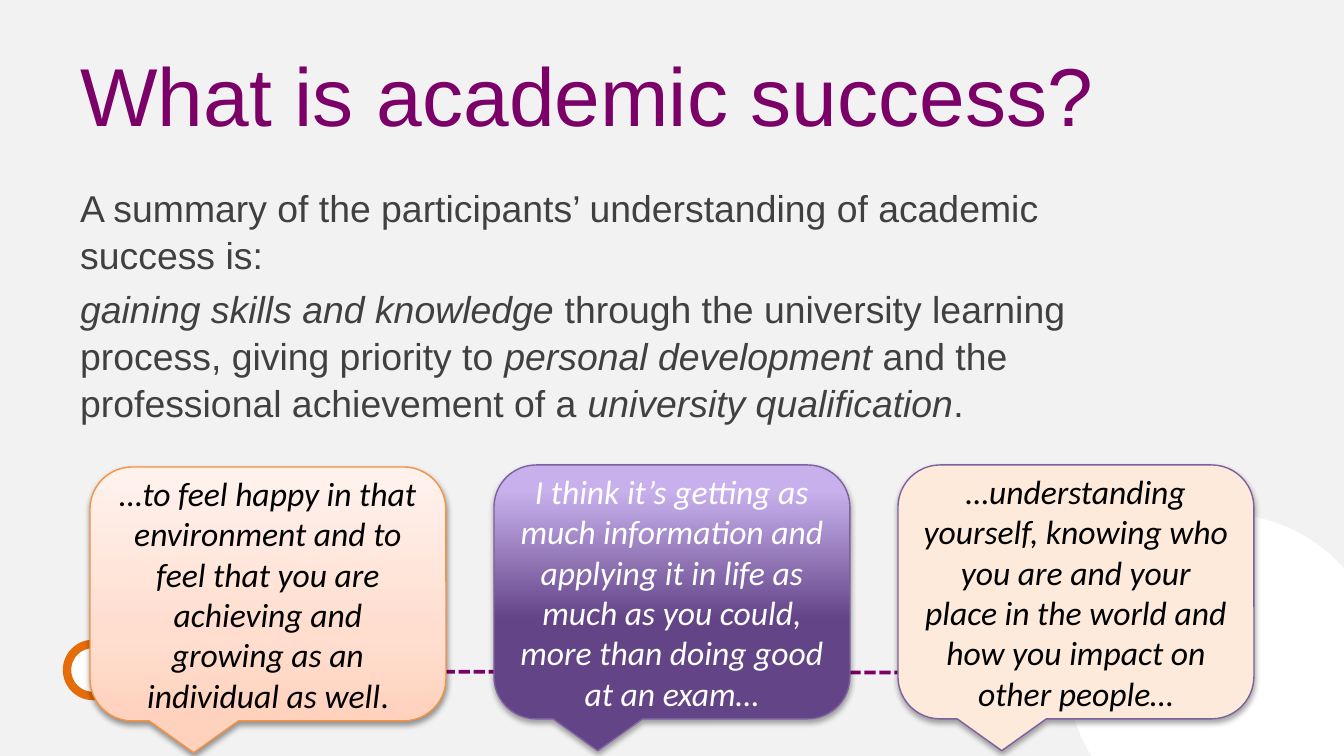
from dataclasses import dataclass

from lxml.etree import SubElement
from pptx import Presentation
from pptx.dml.color import RGBColor
from pptx.enum.dml import MSO_LINE
from pptx.enum.shapes import MSO_CONNECTOR, MSO_SHAPE
from pptx.enum.text import MSO_ANCHOR, MSO_AUTO_SIZE, PP_ALIGN
from pptx.oxml import parse_xml
from pptx.oxml.ns import nsdecls, qn
from pptx.util import Pt

PX = 914400 / 134.4


@dataclass(frozen=True)
class Theme:
    page: str = "F2F2F2"
    white: str = "FFFFFF"
    black: str = "000000"
    plum: str = "7B0068"
    ring: str = "E46C0A"
    body: str = "404040"
    orange_edge: str = "F69240"
    purple_edge: str = "7D60A0"
    peach: str = "FDEADA"
    # Gradient stops run from the bottom edge upwards
    orange_fade: tuple = ((0, "FFD2BD"), (35, "FFDED0"), (100, "FFF2ED"))
    purple_fade: tuple = ((39, "634587"), (90, "C8B0ED"))
    sans: str = "Arial"
    quote_font: str = "Calibri"
    title_size: int = 44
    body_size: int = 20
    quote_size: int = 18


THEME = Theme()

# Each paragraph is a list of (text, italic) spans
SUMMARY = [
    [("A summary of the participants’ understanding of academic success is:", False)],
    [("gaining skills and knowledge", True),
     (" through the university learning process, giving priority to ", False),
     ("personal development", True),
     (" and the professional achievement of a ", False),
     ("university qualification", True),
     (".", False)],
]

# Top, fill, edge, text colour, shadow opacity in percent, spans
QUOTES = [
    (467, THEME.orange_fade, THEME.orange_edge, THEME.black, 38,
     [("…to feel happy in that environment and to feel that you are "
       "achieving and growing as an individual as well", True), (".", False)]),
    (465, THEME.purple_fade, THEME.purple_edge, THEME.white, 35,
     [("I think it’s getting as much information and applying it in life "
       "as much as you could, more than doing good at an exam…", True)]),
    (465, THEME.peach, THEME.purple_edge, THEME.black, 35,
     [("…understanding yourself, knowing who you are and your place in the "
       "world and how you impact on other people…", True)]),
]


def px(*lengths):
    return [round(length * PX) for length in lengths]


def set_all(target, values):
    for name, value in values.items():
        setattr(target, name, value)


def write(frame, paragraphs, font, size, color, frame_format, para_format, gap=0):
    set_all(frame, {"word_wrap": True, "auto_size": MSO_AUTO_SIZE.NONE, **frame_format})
    for index, spans in enumerate(paragraphs):
        para = frame.add_paragraph() if index else frame.paragraphs[0]
        set_all(para, {"space_before": Pt(gap if index else 0), **para_format})
        for text, italic in spans:
            span = para.add_run()
            span.text = text
            set_all(span.font, {"name": font, "size": Pt(size), "italic": italic})
            span.font.color.rgb = RGBColor.from_string(color)


def fade(shape, stops):
    marks = "".join(
        f'<a:gs pos="{position * 1000}"><a:srgbClr val="{color}"/></a:gs>'
        for position, color in stops)
    shape.element.spPr.find(qn("a:prstGeom")).addnext(parse_xml(
        f'<a:gradFill {nsdecls("a")} rotWithShape="1"><a:gsLst>{marks}</a:gsLst>'
        '<a:lin ang="16200000" scaled="0"/></a:gradFill>'))


def add_shape(page, kind, place, fill, edge, edge_width=0.75):
    shape = page.shapes.add_shape(kind, *px(*place))
    shape.shadow.inherit = False
    if isinstance(fill, tuple):
        fade(shape, fill)
    else:
        shape.fill.solid()
        shape.fill.fore_color.rgb = RGBColor.from_string(fill)
    shape.line.color.rgb = RGBColor.from_string(edge)
    shape.line.width = Pt(edge_width)
    return shape


def add_dashes(page, ends):
    line = page.shapes.add_connector(MSO_CONNECTOR.STRAIGHT, *px(*ends))
    line.line.color.rgb = RGBColor.from_string(THEME.plum)
    set_all(line.line, {"width": Pt(2), "dash_style": MSO_LINE.SQUARE_DOT})
    SubElement(line.element.spPr, qn("a:effectLst"))


def drop_shadow(shape, opacity):
    effects = shape.element.spPr.find(qn("a:effectLst"))
    effects.append(parse_xml(
        f'<a:outerShdw {nsdecls("a")} blurRad="{Pt(3.1)}" dist="{Pt(1.7)}" '
        'dir="5400000" rotWithShape="0"><a:srgbClr val="000000">'
        f'<a:alpha val="{opacity * 1000}"/></a:srgbClr></a:outerShdw>'))


def add_quote(page, left, quote):
    top, fill, edge, color, opacity, spans = quote
    callout = add_shape(page, MSO_SHAPE.ROUNDED_RECTANGULAR_CALLOUT,
                        (left, top, 356, 254), fill, edge)
    drop_shadow(callout, opacity)
    write(callout.text_frame, [spans], THEME.quote_font, THEME.quote_size, color,
          {"vertical_anchor": MSO_ANCHOR.MIDDLE}, {"alignment": PP_ALIGN.CENTER})


def add_backdrop(page):
    add_shape(page, MSO_SHAPE.RECTANGLE, (0, 0, 1344, 756), THEME.page, THEME.page)
    add_dashes(page, (128, 671, 1074, 673))
    add_shape(page, MSO_SHAPE.OVAL, (1068, 515, 314, 314), THEME.white, THEME.white)
    add_shape(page, MSO_SHAPE.OVAL, (67, 644, 52, 52), THEME.white, THEME.ring, 4.5)


def add_title(page, text):
    title = page.shapes.title
    # Lift the title above the backdrop
    title.element.getparent().append(title.element)
    set_all(title, dict(zip(("left", "top", "width", "height"), px(67, 31, 1210, 126))))
    write(title.text_frame, [[(text, False)]], THEME.sans, THEME.title_size, THEME.plum,
          {"vertical_anchor": MSO_ANCHOR.MIDDLE}, {"alignment": PP_ALIGN.LEFT})


def add_summary(page):
    box = page.shapes.add_textbox(*px(67, 176, 1024, 425))
    write(box.text_frame, SUMMARY, THEME.sans, THEME.body_size, THEME.body,
          {"vertical_anchor": MSO_ANCHOR.TOP}, {"line_spacing": 1.05}, gap=4)


def main():
    deck = Presentation()
    deck.slide_width, deck.slide_height = px(1344, 756)
    page = deck.slides.add_slide(deck.slide_layouts[5])
    add_backdrop(page)
    add_title(page, "What is academic success?")
    add_summary(page)
    # Three speech callouts at an equal step
    for index, quote in enumerate(QUOTES):
        add_quote(page, 90 + 404 * index, quote)
    deck.save("out.pptx")


if __name__ == "__main__":
    main()
